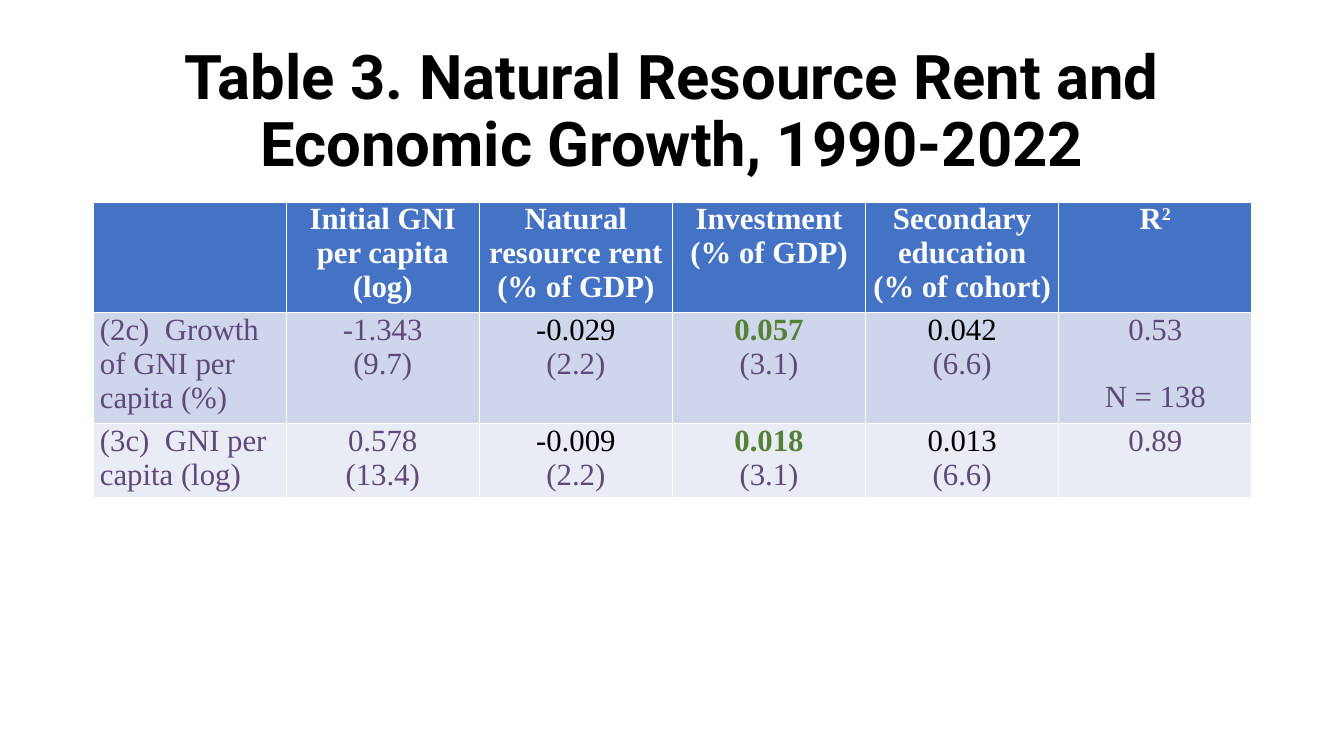
"""Build the slide with the natural resource rent and growth regression table."""
from lxml import etree
from pptx import Presentation, util as u
from pptx.dml.color import RGBColor
from pptx.enum import text
from pptx.oxml.ns import qn

WHITE = RGBColor(0xFF, 0xFF, 0xFF)
BLACK = RGBColor(0, 0, 0)
PURPLE = RGBColor(0x5F, 0x49, 0x7A)
GREEN = RGBColor(0x54, 0x82, 0x35)
FILLS = (RGBColor(0x44, 0x72, 0xC4), RGBColor(0xCF, 0xD5, 0xEA),
         RGBColor(0xE9, 0xEB, 0xF5))

TITLE = "Table 3. Natural Resource Rent and Economic Growth, 1990-2022"
ROWS = [
    [[], ["Initial GNI per capita (log)"], ["Natural resource rent (% of GDP)"],
     ["Investment (% of GDP)"], ["Secondary education", "(% of cohort)"], ["R"]],
    [["(2c)\tGrowth of GNI per capita (%)"], ["-1.343", "(9.7)"],
     ["-0.029", "(2.2)"], ["0.057", "(3.1)"], ["0.042", "(6.6)"],
     ["0.53", "N = 138"]],
    [["(3c)\tGNI per capita (log)"], ["0.578", "(13.4)"],
     ["-0.009", "(2.2)"], ["0.018", "(3.1)"], ["0.013", "(6.6)"], ["0.89"]],
]
POWER = "2"
TINTS = {2: BLACK, 3: GREEN, 4: BLACK}
LEFT, TOP, WIDTH = 93, 202, 1159
HIGHS = (102, 101, 68)
TAB = 65
FACE, SIZE = "Times New Roman", 22


def px(n):
    """Turn px into EMU."""
    return u.Inches(n / 100.8)


def style(para, face, size, color, bold):
    """Set the font of a paragraph."""
    font = para.font
    font.name, font.size, font.bold = face, u.Pt(size), bold
    font.color.rgb = color


def add_tab(para):
    """Add a tab stop after the equation number."""
    tabs = etree.SubElement(para._p.get_or_add_pPr(), qn("a:tabLst"))
    etree.SubElement(tabs, qn("a:tab"), pos=str(px(TAB)), algn="l")


def fill_cell(cell, lines, row, col):
    """Write the lines of one table cell."""
    cell.fill.solid()
    cell.fill.fore_color.rgb = FILLS[row]
    cell.margin_left = cell.margin_right = px(7)
    cell.margin_top = cell.margin_bottom = 0
    frame = cell.text_frame
    for i, line in enumerate(lines):
        para = frame.add_paragraph() if i else frame.paragraphs[0]
        para.add_run().text = line
        if col:
            para.alignment = text.PP_ALIGN.CENTER
        elif row:
            add_tab(para)
        if line.startswith("N ="):
            para.space_before = u.Pt(24)
        if row == 0:
            tint = WHITE
        else:
            tint = PURPLE if i else TINTS.get(col, PURPLE)
        style(para, FACE, SIZE, tint, row == 0 or tint == GREEN)
        if line == "R":
            run = para.add_run()
            run.text = POWER
            run._r.get_or_add_rPr().set("baseline", "30000")
    if not lines:
        style(frame.paragraphs[0], FACE, SIZE, WHITE, True)


def main():
    """Build and save the slide."""
    deck = Presentation()
    deck.slide_width, deck.slide_height = px(1344), px(756)
    slide = deck.slides.add_slide(deck.slide_layouts[6])

    box = slide.shapes.add_textbox(px(LEFT), px(40), px(WIDTH), px(146))
    frame = box.text_frame
    frame.word_wrap = True
    frame.vertical_anchor = text.MSO_ANCHOR.MIDDLE
    para = frame.paragraphs[0]
    para.text = TITLE
    para.alignment = text.PP_ALIGN.CENTER
    para.line_spacing = 0.9
    style(para, "Roboto", 44, BLACK, True)

    table = slide.shapes.add_table(len(ROWS), len(ROWS[0]), px(LEFT), px(TOP),
                                   px(WIDTH), px(sum(HIGHS))).table
    for r, cells in enumerate(ROWS):
        table.rows[r].height = px(HIGHS[r])
        for c, lines in enumerate(cells):
            fill_cell(table.cell(r, c), lines, r, c)
    deck.save("out.pptx")


if __name__ == "__main__":
    main()
